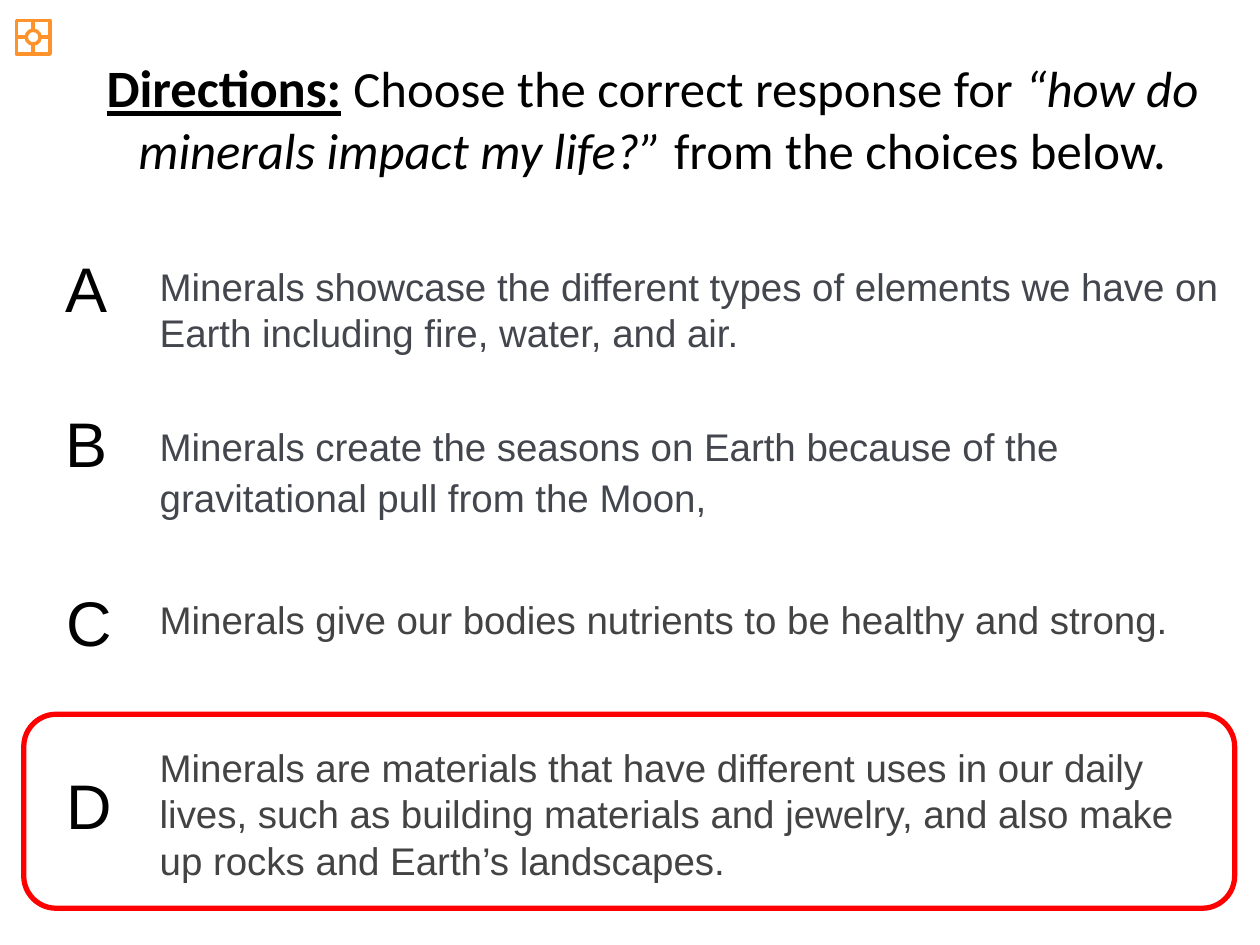
from dataclasses import dataclass

from lxml.etree import SubElement
from pptx import Presentation
from pptx.dml.color import RGBColor
from pptx.enum.shapes import MSO_CONNECTOR, MSO_SHAPE
from pptx.enum.text import MSO_ANCHOR, MSO_AUTO_SIZE, PP_ALIGN
from pptx.oxml.ns import qn
from pptx.shapes.autoshape import Shape
from pptx.slide import Slide
from pptx.util import Cm, Pt

BLACK = RGBColor(0x00, 0x00, 0x00)
WHITE = RGBColor(0xFF, 0xFF, 0xFF)
ORANGE = RGBColor(0xFF, 0x93, 0x2B)
RED = RGBColor(0xFF, 0x00, 0x00)
SLATE = RGBColor(0x43, 0x46, 0x4D)
GRAY = RGBColor(0x43, 0x43, 0x43)


@dataclass(frozen=True)
class Box:
    left: float
    top: float
    width: float
    height: float

    def lengths(self) -> tuple[Cm, Cm, Cm, Cm]:
        return Cm(self.left), Cm(self.top), Cm(self.width), Cm(self.height)


@dataclass(frozen=True)
class Choice:
    letter: str
    letter_left: float
    letter_top: float
    text: str
    text_top: float
    text_height: float
    color: RGBColor
    line_spacing: float = 1.0


@dataclass(frozen=True)
class TitleRun:
    text: str
    size: float = 29
    bold: bool = False
    italic: bool = False
    underline: bool = False


CHOICES = [
    Choice("A", 1.07, 4.9,
           "Minerals showcase the different types of elements we have on Earth "
           "including fire, water, and air.", 5.18, 2.13, SLATE),
    Choice("B", 1.07, 8.03,
           "Minerals create the seasons on Earth because of the gravitational "
           "pull from the Moon,", 8.31, 2.24, SLATE, 1.1),
    Choice("C", 1.09, 11.63,
           "Minerals give our bodies nutrients to be healthy and strong.",
           11.89, 1.19, GRAY),
    Choice("D", 1.09, 15.32,
           "Minerals are materials that have different uses in our daily lives, "
           "such as building materials and jewelry, and also make up rocks and "
           "Earth’s landscapes.", 14.88, 3.07, GRAY),
]

TITLE_RUNS = [
    TitleRun("Directions:", size=30, bold=True, underline=True),
    TitleRun(" ", size=30, bold=True),
    TitleRun("Choose the correct response for "),
    TitleRun("“how do minerals impact my life?” ", italic=True),
    TitleRun("from the choices below."),
]


def add_title(slide: Slide, box: Box) -> None:
    title = slide.shapes.title
    title.left, title.top, title.width, title.height = box.lengths()
    frame = title.text_frame
    frame.word_wrap = True
    frame.auto_size = MSO_AUTO_SIZE.NONE
    frame.vertical_anchor = MSO_ANCHOR.TOP
    paragraph = frame.paragraphs[0]
    paragraph.alignment = PP_ALIGN.CENTER
    paragraph.font.name = "Calibri"
    paragraph.font.color.rgb = BLACK
    for title_run in TITLE_RUNS:
        run = paragraph.add_run()
        run.text = title_run.text
        run.font.name = "Calibri"
        run.font.color.rgb = BLACK
        run.font.size = Pt(title_run.size)
        run.font.bold = title_run.bold
        run.font.italic = title_run.italic
        run.font.underline = title_run.underline


def add_text(slide: Slide, text: str, box: Box, size: float,
             color: RGBColor, line_spacing: float = 1.0) -> None:
    frame = slide.shapes.add_textbox(*box.lengths()).text_frame
    frame.word_wrap = True
    paragraph = frame.paragraphs[0]
    paragraph.text = text
    paragraph.line_spacing = line_spacing
    paragraph.font.name = "Arial"
    paragraph.font.size = Pt(size)
    paragraph.font.color.rgb = color


def add_choice(slide: Slide, choice: Choice) -> None:
    letter_box = Box(choice.letter_left, choice.letter_top, 1.45, 1.8)
    text_box = Box(2.97, choice.text_top, 21.87, choice.text_height)
    add_text(slide, choice.letter, letter_box, 36, BLACK)
    add_text(slide, choice.text, text_box, 22, choice.color, choice.line_spacing)


def add_outline(slide: Slide, kind: MSO_SHAPE, box: Box,
                color: RGBColor, weight: float) -> Shape:
    shape = slide.shapes.add_shape(kind, *box.lengths())
    shape.shadow.inherit = False
    shape.fill.background()
    shape.line.color.rgb = color
    shape.line.width = Pt(weight)
    return shape


def add_icon(slide: Slide, center_x: float, center_y: float,
             half_side: float, radius: float) -> None:
    add_outline(slide, MSO_SHAPE.RECTANGLE,
                Box(center_x - half_side, center_y - half_side,
                    2 * half_side, 2 * half_side), ORANGE, 2)
    for step_x, step_y in ((0, -1), (0, 1), (-1, 0), (1, 0)):
        spoke = slide.shapes.add_connector(
            MSO_CONNECTOR.STRAIGHT,
            Cm(center_x + step_x * half_side), Cm(center_y + step_y * half_side),
            Cm(center_x + step_x * radius), Cm(center_y + step_y * radius))
        spoke.line.color.rgb = ORANGE
        spoke.line.width = Pt(2)
        SubElement(spoke._element.spPr, qn("a:effectLst"))
    hub = add_outline(slide, MSO_SHAPE.OVAL,
                      Box(center_x - radius, center_y - radius,
                          2 * radius, 2 * radius), ORANGE, 2)
    hub.fill.solid()
    hub.fill.fore_color.rgb = WHITE


def main() -> None:
    presentation = Presentation()
    presentation.slide_width = Cm(25.4)
    presentation.slide_height = Cm(19.05)
    slide = presentation.slides.add_slide(presentation.slide_layouts[5])
    add_icon(slide, 0.67, 0.75, 0.34, 0.14)
    add_title(slide, Box(1.75, 0.99, 22.81, 2.77))
    for choice in CHOICES:
        add_choice(slide, choice)
    add_outline(slide, MSO_SHAPE.ROUNDED_RECTANGLE,
                Box(0.48, 14.4, 24.41, 3.91), RED, 3)
    presentation.save("out.pptx")


if __name__ == "__main__":
    main()
